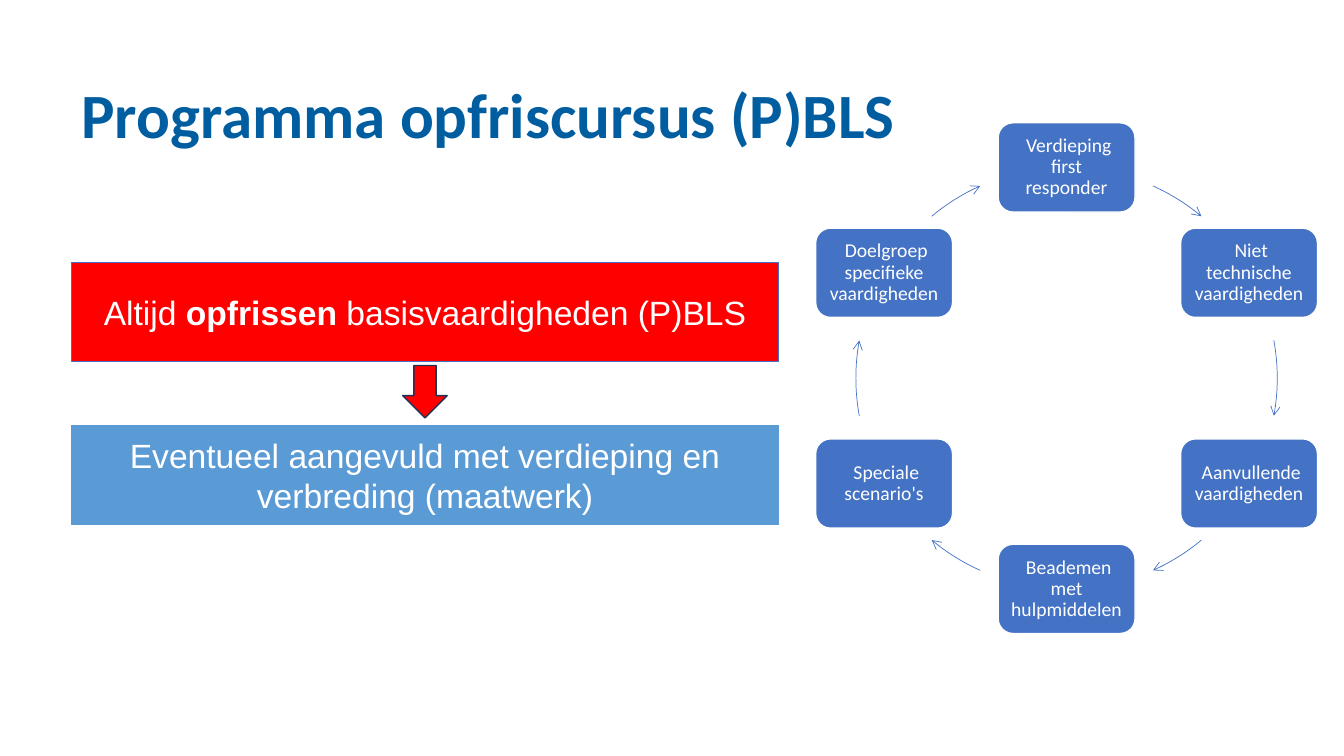
from dataclasses import dataclass
from math import cos, radians, sin

from lxml import etree
from pptx import Presentation
from pptx.dml.color import RGBColor
from pptx.enum.shapes import MSO_SHAPE as Geo
from pptx.enum.text import MSO_ANCHOR as Anchor, MSO_AUTO_SIZE as AutoSize, PP_ALIGN as Align
from pptx.oxml.ns import qn
from pptx.util import Cm, Pt

BLUE, RED, WHITE = "4472C4", "FF0000", "FFFFFF"
CX, CY, RADIUS = 26.88, 9.53, 5.31  # cycle centre and radius in cm
NODE_W, NODE_H = 3.45, 2.25


@dataclass
class Block:
    x: float
    y: float
    w: float
    h: float
    fill: str
    line: str
    line_pt: float
    geo: Geo = Geo.RECTANGLE
    text: str = ""


@dataclass
class Arc:
    middle: float  # degrees, clockwise from the right
    half: float


def rgb(code: str) -> RGBColor:
    return RGBColor.from_string(code)


def write(tf, text: str, *, size: float, font: str, color: str = WHITE, bold: bool = False,
          align=Align.CENTER, spacing: float = 1.0, inset: float = 0.25) -> None:
    """Write one paragraph; *stars* enclose bold words, a newline breaks the line."""
    tf.word_wrap, tf.auto_size, tf.vertical_anchor = True, AutoSize.NONE, Anchor.MIDDLE
    tf.margin_left = tf.margin_right = Cm(inset)
    tf.margin_top = tf.margin_bottom = Cm(min(inset, 0.15))
    p = tf.paragraphs[0]
    p.alignment, p.line_spacing, p.space_before = align, spacing, Pt(0)
    for i, line in enumerate(text.split("\n")):
        if i:
            p.add_line_break()
        for j, part in enumerate(line.split("*")):
            r = p.add_run()
            r.text = part
            f = r.font
            f.size, f.name, f.bold = Pt(size), font, bold or j % 2 == 1
            f.color.rgb = rgb(color)


def add_block(s, b: Block):
    sp = s.shapes.add_shape(b.geo, Cm(b.x), Cm(b.y), Cm(b.w), Cm(b.h))
    sp.shadow.inherit = False
    sp.fill.solid()
    sp.fill.fore_color.rgb = rgb(b.fill)
    sp.line.color.rgb = rgb(b.line)
    sp.line.width = Pt(b.line_pt)
    return sp


def on_circle(angle: float) -> tuple[float, float]:
    a = radians(angle)
    return CX + RADIUS * cos(a), CY + RADIUS * sin(a)


def frame_as_circle(sp) -> None:
    """Let the frame of an arc span the whole circle, keeping the arc in place."""
    left, top, side = Cm(CX - RADIUS), Cm(CY - RADIUS), Cm(2 * RADIUS)
    dx, dy = sp.left - left, sp.top - top
    for pt in sp._element.iter(qn("a:pt")):
        pt.set("x", str(int(pt.get("x")) + dx))
        pt.set("y", str(int(pt.get("y")) + dy))
    for outline in sp._element.iter(qn("a:path")):
        outline.set("w", str(side))
        outline.set("h", str(side))
    sp.left, sp.top, sp.width, sp.height = left, top, side, side


def add_arc(s, arc: Arc, steps: int = 12) -> None:
    points = []
    for i in range(steps + 1):
        x, y = on_circle(arc.middle + arc.half * (2 * i / steps - 1))
        points.append((Cm(x), Cm(y)))
    fb = s.shapes.build_freeform(*points[0])
    fb.add_line_segments(points[1:], close=False)
    sp = fb.convert_to_shape()
    frame_as_circle(sp)
    sp.shadow.inherit = False
    sp.fill.background()
    sp.line.color.rgb = rgb(BLUE)
    sp.line.width = Pt(0.5)
    etree.SubElement(sp.line._get_or_add_ln(), qn("a:tailEnd"), type="arrow")


BLOCKS = [
    Block(1.8, 6.61, 17.82, 2.5, RED, BLUE, 0.5,
          text="Altijd *opfrissen *basisvaardigheden (P)BLS"),
    Block(1.8, 10.72, 17.82, 2.5, "5B9BD5", "5B9BD5", 0.5,
          text="Eventueel aangevuld met verdieping en verbreding (maatwerk)"),
    Block(10.15, 9.21, 1.12, 1.32, RED, "1E3256", 1, Geo.DOWN_ARROW),
]
TOPICS = [
    " Verdieping first responder",
    " Niet technische vaardigheden",
    " Aanvullende vaardigheden",
    " Beademen met hulpmiddelen",
    " Speciale scenario's",
    " Doelgroep\nspecifieke vaardigheden",
]
ARCS = [Arc(-58, 7.8), Arc(0, 10.3), Arc(58, 7.8),
        Arc(122, 7.8), Arc(180, 10.3), Arc(238, 7.8)]


def main() -> None:
    prs = Presentation()
    prs.slide_width, prs.slide_height = Cm(33.87), Cm(19.05)
    s = prs.slides.add_slide(prs.slide_layouts[5])

    # Title
    title = s.shapes.title
    title.left, title.top, title.width, title.height = Cm(1.8), Cm(2.05), Cm(22.2), Cm(1.85)
    write(title.text_frame, "Programma opfriscursus (P)BLS", size=45, font="Calibri",
          color="005D9F", bold=True, align=Align.LEFT, spacing=0.9)

    # Two steps with the arrow between them
    for b in BLOCKS:
        sp = add_block(s, b)
        if b.text:
            write(sp.text_frame, b.text, size=24, font="Arial")

    # Cycle of topics, clockwise from the top
    for i, (topic, arc) in enumerate(zip(TOPICS, ARCS)):
        x, y = on_circle(-90 + i * 360 / len(TOPICS))
        node = add_block(s, Block(x - NODE_W / 2, y - NODE_H / 2, NODE_W, NODE_H,
                                  BLUE, WHITE, 1, Geo.ROUNDED_RECTANGLE))
        write(node.text_frame, topic, size=14, font="Calibri", spacing=0.9, inset=0.15)
        add_arc(s, arc)

    prs.save("out.pptx")


if __name__ == "__main__":
    main()
